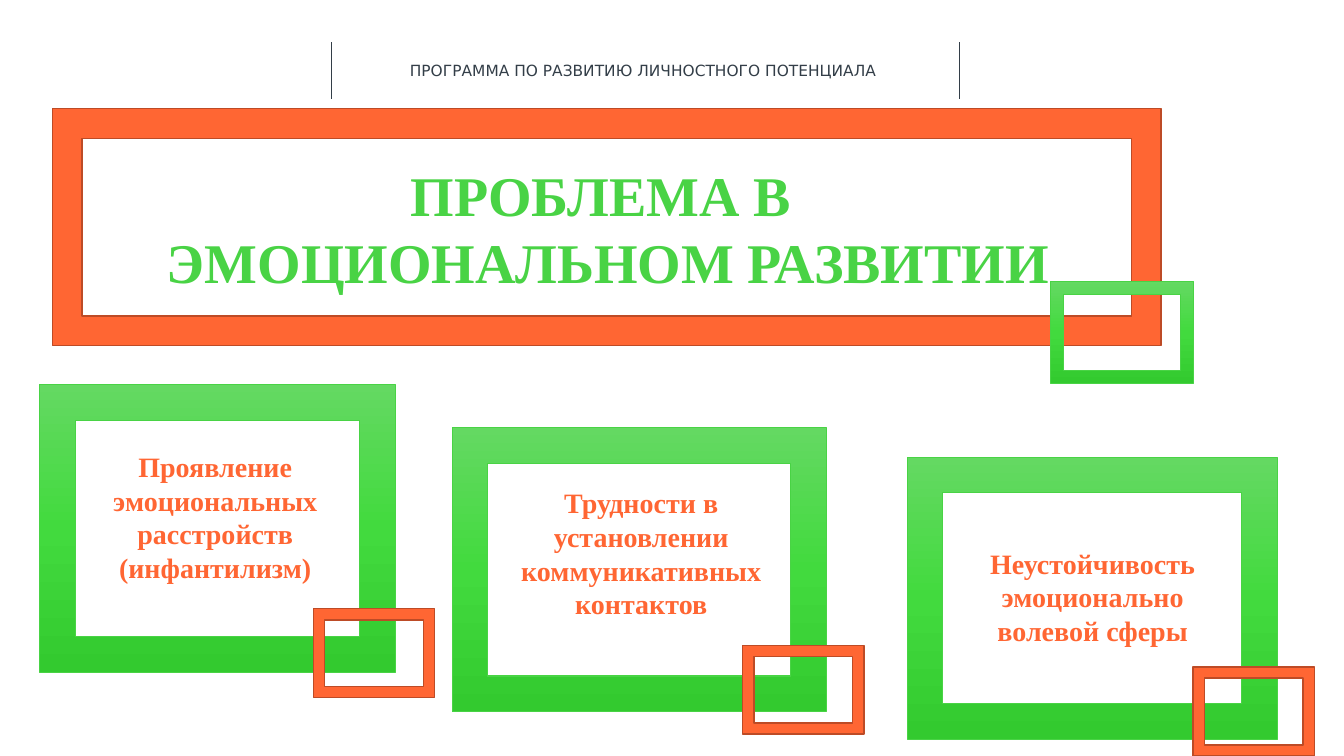
from copy import deepcopy
from dataclasses import dataclass

from lxml import etree
from pptx import Presentation
from pptx.dml.color import RGBColor
from pptx.enum.shapes import MSO_CONNECTOR, MSO_SHAPE
from pptx.enum.text import MSO_ANCHOR, MSO_AUTO_SIZE, PP_ALIGN
from pptx.oxml.ns import qn
from pptx.util import Cm, Pt

FRAME = MSO_SHAPE.FRAME
LINE = MSO_CONNECTOR.STRAIGHT
TOP = MSO_ANCHOR.TOP
NO_FIT = MSO_AUTO_SIZE.NONE
LEFT, MID = PP_ALIGN.LEFT, PP_ALIGN.CENTER
SERIF, SANS = "Times New Roman", "DejaVu Sans"
HEX = {
    "dark": "333E48", "orange": "FF6633", "rust": "BD4B26", "green": "49D345",
    "light": "64D962", "mid": "42DA3E", "deep": "33CA2F", "halo": "FFFEFE",
}
SHADES = [(0, "light"), (0.5, "mid"), (1, "deep")]


@dataclass
class Box:
    x: float
    y: float
    w: float
    h: float

    def cm(self) -> tuple:
        return Cm(self.x), Cm(self.y), Cm(self.w), Cm(self.h)


@dataclass
class Card:
    text: str
    area: Box
    frame: Box
    mark: tuple[float, float]


CARDS = [
    Card("Проявление эмоциональных расстройств (инфантилизм)",
         Box(1.88, 11.2, 7.09, 3.68), Box(0.99, 9.68, 8.97, 7.26), (7.9, 15.34)),
    Card("Трудности в установлении коммуникативных контактов",
         Box(12.4, 12.12, 7.52, 3.68), Box(11.4, 10.77, 9.42, 7.16), (18.72, 16.26)),
    Card("Неустойчивость эмоционально волевой сферы",
         Box(23.8, 13.64, 7.47, 2.82), Box(22.86, 11.53, 9.32, 7.09), (30.07, 16.81)),
]


def rgb(name: str) -> RGBColor:
    return RGBColor.from_string(HEX[name])


def add_frame(slide, box: Box, green: bool) -> None:
    shape = slide.shapes.add_shape(FRAME, *box.cm())
    shape.shadow.inherit = False
    shape.line.color.rgb = rgb("green" if green else "rust")
    shape.line.width = Pt(0.5 if green else 1)
    if not green:
        shape.fill.solid()
        shape.fill.fore_color.rgb = rgb("orange")
        return
    shape.fill.gradient()
    shape.fill.gradient_angle = 270
    last = shape._element.spPr.findall(".//" + qn("a:gs"))[-1]
    last.addnext(deepcopy(last))
    for stop, (pos, name) in zip(shape.fill.gradient_stops, SHADES):
        stop.position = pos
        stop.color.rgb = rgb(name)


def set_text(shape, text: str, size: int, color: str, face: str = SERIF,
             bold: bool = True, align=MID) -> None:
    frame = shape.text_frame
    frame.text = text
    frame.word_wrap = True
    frame.auto_size = NO_FIT
    frame.vertical_anchor = TOP
    for para in frame.paragraphs:
        para.alignment = align
        for run in para.runs:
            run.font.name = face
            run.font.size = Pt(size)
            run.font.bold = bold
            run.font.color.rgb = rgb(color)


def add_halo(shape) -> None:
    for para in shape.text_frame.paragraphs:
        for run in para.runs:
            line = etree.Element(qn("a:ln"), w=str(Pt(1.5)))
            fill = etree.SubElement(line, qn("a:solidFill"))
            etree.SubElement(fill, qn("a:srgbClr"), val=HEX["halo"])
            run.font._element.insert(0, line)


def add_rule(slide, x: float) -> None:
    rule = slide.shapes.add_connector(LINE, Cm(x), Cm(1.07), Cm(x), Cm(2.49))
    rule.line.color.rgb = rgb("dark")
    rule.line.width = Pt(0.5)
    etree.SubElement(rule._element.spPr, qn("a:effectLst"))


def main() -> None:
    deck = Presentation()
    deck.slide_width, deck.slide_height = Cm(33.87), Cm(19.05)
    slide = deck.slides.add_slide(deck.slide_layouts[5])

    # Header between two rules
    for x in (8.36, 24.18):
        add_rule(slide, x)
    head = slide.shapes.add_textbox(*Box(10.08, 1.42, 12.37, 0.74).cm())
    set_text(head, "ПРОГРАММА ПО РАЗВИТИЮ ЛИЧНОСТНОГО ПОТЕНЦИАЛА", 11, "dark",
             SANS, False, LEFT)

    # Title in its frame
    add_frame(slide, Box(1.32, 2.74, 27.94, 5.97), False)
    title = slide.shapes.title
    title.left, title.top, title.width, title.height = Box(2.62, 3.91, 25.4, 3.68).cm()
    set_text(title, "ПРОБЛЕМА В \nЭМОЦИОНАЛЬНОМ РАЗВИТИИ", 40, "green")
    add_halo(title)
    add_frame(slide, Box(26.47, 7.09, 3.61, 2.57), True)

    # Three problem cards with corner marks
    for card in CARDS:
        set_text(slide.shapes.add_textbox(*card.area.cm()), card.text, 20, "orange")
        add_frame(slide, card.frame, True)
        add_frame(slide, Box(*card.mark, 3.05, 2.24), False)

    deck.save("out.pptx")


if __name__ == "__main__":
    main()
